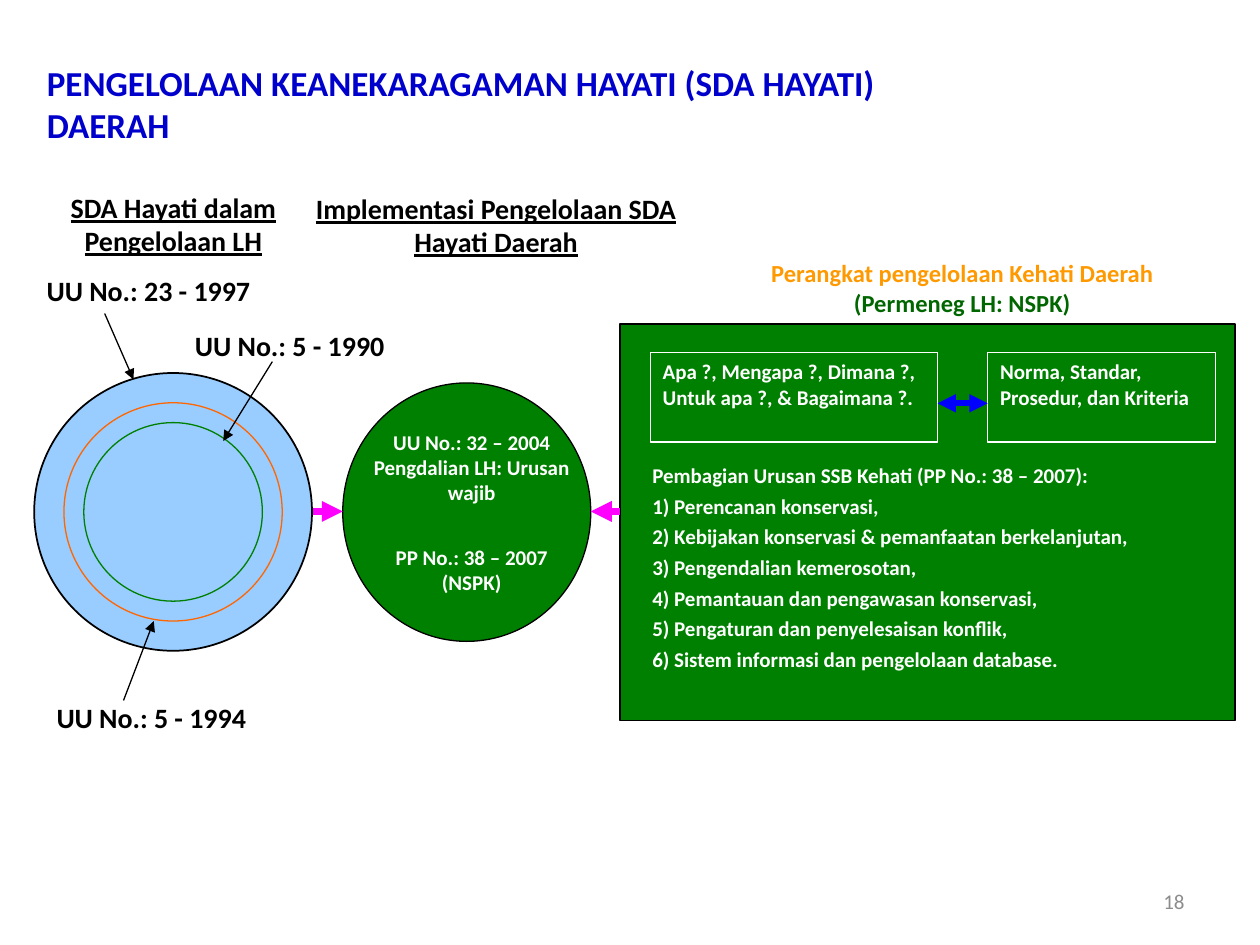
from dataclasses import dataclass

from lxml import etree
from pptx import Presentation
from pptx import util as u
from pptx.dml.color import RGBColor
from pptx.enum import shapes, text
from pptx.oxml import ns


@dataclass(frozen=True)
class Theme:
    """Colours, typeface and type sizes of the slide."""
    font: str = "Calibri"
    black: str = "000000"
    white: str = "FFFFFF"
    title: str = "0000CC"
    sky: str = "99CCFF"
    green: str = "008000"
    dark_green: str = "006600"
    orange: str = "FF9900"
    ring: str = "FF6600"
    pink: str = "FF00FF"
    blue: str = "0000FF"
    grey: str = "8C8C8C"
    title_size: int = 20
    label_size: int = 16
    caption_size: int = 14
    body_size: int = 12


THEME = Theme()
LEFT, CENTER, RIGHT = text.PP_ALIGN.LEFT, text.PP_ALIGN.CENTER, text.PP_ALIGN.RIGHT
TOP, MIDDLE = text.MSO_ANCHOR.TOP, text.MSO_ANCHOR.MIDDLE
TASKS = [
    "Pembagian Urusan SSB Kehati (PP No.: 38 – 2007):",
    "1) Perencanan konservasi,",
    "2) Kebijakan konservasi & pemanfaatan berkelanjutan,",
    "3) Pengendalian kemerosotan,",
    "4) Pemantauan dan pengawasan konservasi,",
    "5) Pengaturan dan penyelesaisan konflik,",
    "6) Sistem informasi dan pengelolaan database.",
]


def apply(target, values):
    """Set every attribute named in values on target."""
    for name, value in values.items():
        setattr(target, name, value)


def cm(*lengths):
    """Turn plain numbers into centimetre lengths."""
    return [u.Cm(length) for length in lengths]


def write_runs(paragraph, runs, size, align=LEFT, **style):
    """Fill a paragraph with (wording, colour) runs in one type style."""
    paragraph.alignment = align
    for wording, color in runs:
        run = paragraph.add_run()
        run.text = wording
        apply(run.font, {"name": THEME.font, "size": u.Pt(size), "bold": True, **style})
        run.font.color.rgb = RGBColor.from_string(color)


def set_frame(frame, anchor=TOP):
    """Make a text frame wrap without resizing and set its anchor."""
    apply(frame, {"word_wrap": True, "auto_size": text.MSO_AUTO_SIZE.NONE,
                  "vertical_anchor": anchor})


def add_title(slide, wording, box):
    """Move and format the title placeholder."""
    title = slide.shapes.title
    apply(title, dict(zip(("left", "top", "width", "height"), cm(*box))))
    set_frame(title.text_frame)
    write_runs(title.text_frame.paragraphs[0], [(wording, THEME.title)], THEME.title_size)


def add_label(slide, runs, box, size, align=LEFT, anchor=TOP, **style):
    """Add a one-paragraph text box."""
    frame = slide.shapes.add_textbox(*cm(*box)).text_frame
    set_frame(frame, anchor)
    write_runs(frame.paragraphs[0], runs, size, align, **style)


def add_area(slide, kind, box, line, fill=None, width=0.75):
    """Add an outlined preset shape, filled or hollow."""
    area = slide.shapes.add_shape(kind, *cm(*box))
    area.shadow.inherit = False
    if fill:
        area.fill.solid()
        area.fill.fore_color.rgb = RGBColor.from_string(fill)
    else:
        area.fill.background()
    area.line.color.rgb = RGBColor.from_string(line)
    area.line.width = u.Pt(width)
    return area


def add_circle(slide, center, diameter, line, fill=None, width=0.75):
    """Add a circle around a centre point."""
    left, top = (position - diameter / 2 for position in center)
    add_area(slide, shapes.MSO_SHAPE.OVAL, (left, top, diameter, diameter), line, fill, width)


def add_note(slide, wording, box):
    """Add a hollow white-edged rectangle with text."""
    note = add_area(slide, shapes.MSO_SHAPE.RECTANGLE, box, THEME.white)
    set_frame(note.text_frame)
    write_runs(note.text_frame.paragraphs[0], [(wording, THEME.white)], THEME.body_size)


def add_arrow(slide, start, end, color=THEME.black, width=0.75, ends=("tailEnd",)):
    """Add a straight arrow with triangle heads at the named ends."""
    arrow = slide.shapes.add_connector(shapes.MSO_CONNECTOR.STRAIGHT, *cm(*start, *end))
    arrow.line.color.rgb = RGBColor.from_string(color)
    arrow.line.width = u.Pt(width)
    outline = arrow.line._get_or_add_ln()
    for end_name in ends:
        etree.SubElement(outline, ns.qn(f"a:{end_name}"), type="triangle")
    etree.SubElement(arrow._element.spPr, ns.qn("a:effectLst"))


def add_tasks(slide, tasks, box):
    """Add the list of tasks with hanging indents."""
    frame = slide.shapes.add_textbox(*cm(*box)).text_frame
    set_frame(frame)
    for index, task in enumerate(tasks):
        paragraph = frame.add_paragraph() if index else frame.paragraphs[0]
        indent = u.Cm(0.48)
        properties = paragraph._p.get_or_add_pPr()
        properties.set("marL", str(indent))
        properties.set("indent", str(-indent))
        apply(paragraph, {"line_spacing": 0.8, "space_before": u.Pt(6 if index else 0)})
        write_runs(paragraph, [(task, THEME.white)], THEME.body_size)


def add_laws(slide):
    """Draw the nested circles of laws with their labels and pointers."""
    center = (3.49, 10.32)
    add_circle(slide, center, 5.6, THEME.black, THEME.sky, 1)
    add_circle(slide, center, 4.4, THEME.ring)
    add_circle(slide, center, 3.6, THEME.green)
    for law, corner, start, end in (
        ("UU No.: 23 - 1997", (0.69, 5.38), (2.11, 6.32), (2.69, 7.65)),
        ("UU No.: 5 - 1990", (3.68, 6.5), (5.49, 7.29), (4.5, 8.89)),
        ("UU No.: 5 - 1994", (0.89, 14), (2.49, 14.12), (3.1, 12.52)),
    ):
        add_label(slide, [(law, THEME.black)], (*corner, 5.21, 0.94), THEME.label_size)
        add_arrow(slide, start, end)


def add_implementation(slide):
    """Draw the green circle of regional implementation."""
    add_area(slide, shapes.MSO_SHAPE.OVAL, (6.91, 7.72, 5, 5.21), THEME.black, THEME.green)
    for rule, top, height in (
        ("UU No.: 32 – 2004 Pengdalian LH: Urusan wajib", 8.53, 1.78),
        ("PP No.: 38 – 2007 (NSPK)", 10.85, 1.27),
    ):
        add_label(slide, [(rule, THEME.white)], (7.11, top, 4.8, height),
                  THEME.body_size, CENTER)
    for start, end in ((6.3, 6.91), (12.5, 11.91)):
        add_arrow(slide, (start, 10.31), (end, 10.31), THEME.pink, 4)


def add_instruments(slide):
    """Draw the green panel of management instruments."""
    add_area(slide, shapes.MSO_SHAPE.RECTANGLE, (12.5, 6.53, 12.4, 8), THEME.black, THEME.green)
    add_note(slide, "Apa ?, Mengapa ?, Dimana ?, Untuk apa ?, & Bagaimana ?.",
             (13.11, 7.11, 5.79, 1.8))
    add_note(slide, "Norma, Standar, Prosedur, dan Kriteria", (19.91, 7.11, 4.6, 1.8))
    add_arrow(slide, (18.9, 8.13), (19.91, 8.13), THEME.blue, 3.5, ("headEnd", "tailEnd"))
    add_tasks(slide, TASKS, (12.9, 9.3, 11.81, 4.62))
    add_label(slide, [("Perangkat pengelolaan Kehati Daerah ", THEME.orange),
                      ("(Permeneg LH: NSPK)", THEME.dark_green)],
              (14.5, 5.08, 9.8, 1.45), THEME.caption_size, CENTER)


def main():
    """Build and save the slide."""
    deck = Presentation()
    apply(deck, {"slide_width": u.Cm(25.4), "slide_height": u.Cm(19.05)})
    slide = deck.slides.add_slide(deck.slide_layouts[5])
    add_title(slide, "PENGELOLAAN KEANEKARAGAMAN HAYATI (SDA HAYATI) DAERAH",
              (0.69, 1.12, 17.4, 1.96))
    for heading, box in (
        ("SDA Hayati dalam Pengelolaan LH", (0.69, 3.71, 5.61, 1.63)),
        ("Implementasi Pengelolaan SDA Hayati Daerah", (6.1, 3.73, 7.8, 1.63)),
    ):
        add_label(slide, [(heading, THEME.black)], box, THEME.label_size, CENTER, underline=True)
    add_laws(slide)
    add_instruments(slide)
    add_implementation(slide)
    add_label(slide, [("18", THEME.grey)], (18.21, 17.65, 5.92, 1.02), THEME.body_size,
              RIGHT, MIDDLE, bold=False)
    deck.save("out.pptx")


if __name__ == "__main__":
    main()
